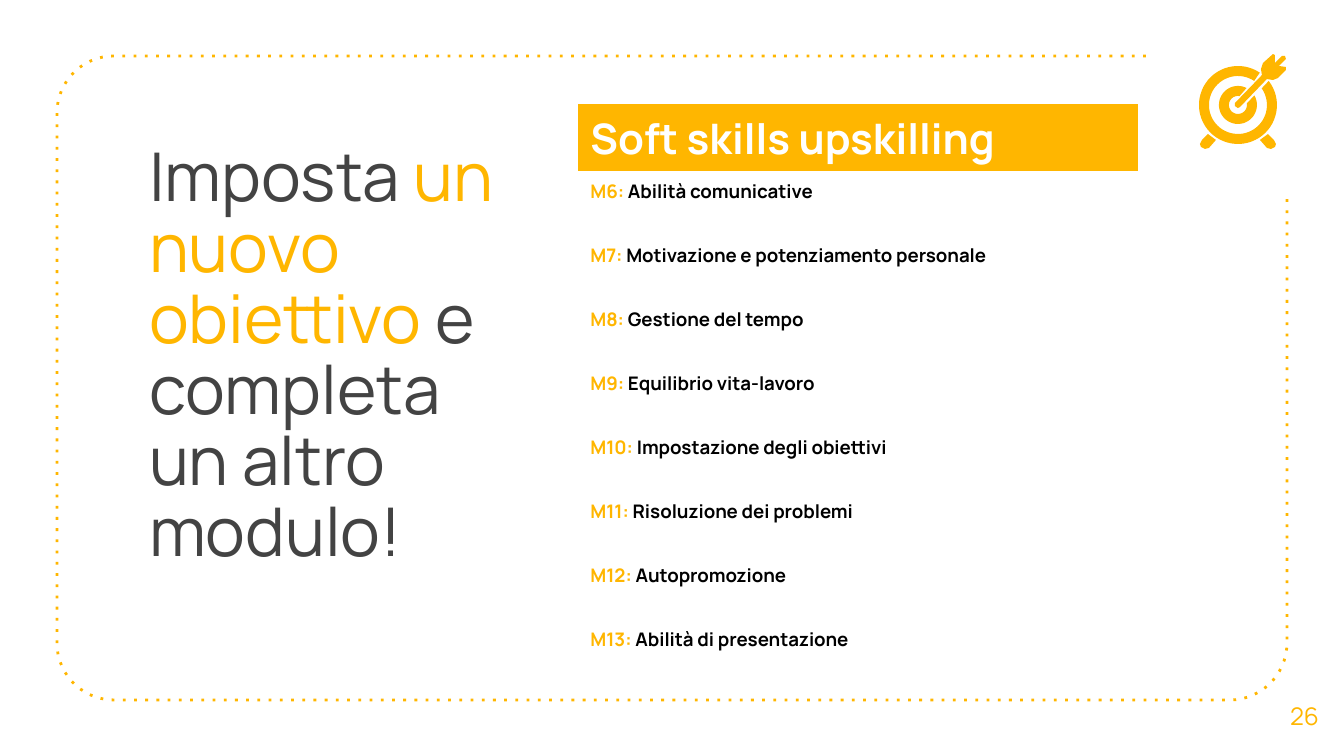
"""Build the soft skills module slide."""
from dataclasses import dataclass
from math import cos, radians, sin

from pptx import Presentation
from pptx.dml.color import RGBColor
from pptx.enum.dml import MSO_LINE
from pptx.enum.text import MSO_ANCHOR, PP_ALIGN
from pptx.oxml.ns import qn
from pptx.util import Emu, Pt

SCALE = 914400 / 134.4
DOT = MSO_LINE.ROUND_DOT
TOP, MIDDLE = MSO_ANCHOR.TOP, MSO_ANCHOR.MIDDLE
LEFT, CENTER = PP_ALIGN.LEFT, PP_ALIGN.CENTER
FONT = "Manrope"
GOLD, GRAY, BLACK, WHITE = "FFB600", "434343", "000000", "FFFFFF"
Points = list[tuple[float, float]]


@dataclass
class Run:
    text: str
    size: float
    color: str
    bold: bool = False


@dataclass
class Box:
    left: int
    top: int
    width: int
    height: int
    runs: list[Run]
    anchor: MSO_ANCHOR = TOP
    align: PP_ALIGN = LEFT
    space: float = 1.0


@dataclass
class Ring:
    outer: int
    inner: int
    start: tuple[int, int]
    end: tuple[int, int]


HUB = (1238, 105)
RINGS = [
    Ring(39, 29, (-38, -35), (304, 304)),
    Ring(19, 9, (-30, -10), (297, 280)),
]
FOOT = [(1208, 134), (1202, 140), (1200, 144), (1201, 147), (1205, 149),
        (1209, 148), (1216, 140)]
DART = [(1273, 54), (1263, 63), (1261, 69), (1262, 75), (1235, 103),
        (1235, 106), (1238, 108), (1240, 107), (1267, 79), (1273, 80),
        (1278, 78), (1286, 70), (1286, 67), (1279, 66), (1286, 59),
        (1285, 56), (1282, 56), (1275, 63), (1275, 55)]
TITLE = Box(136, 132, 399, 126, [
    Run("Imposta ", 36, GRAY),
    Run("un nuovo obiettivo", 36, GOLD),
    Run(" e completa un altro modulo!", 36, GRAY),
], space=0.88)
PAGE = Box(1265, 675, 79, 81, [Run("26", 13, GOLD)], MIDDLE, CENTER)
HEAD = Run("Soft skills upskilling", 22.5, WHITE, True)
SKILLS = ["Abilità comunicative", "Motivazione e potenziamento personale",
          "Gestione del tempo", "Equilibrio vita-lavoro",
          "Impostazione degli obiettivi", "Risoluzione dei problemi",
          "Autopromozione", "Abilità di presentazione"]
FIRST = 6


def px(value: float) -> Emu:
    return Emu(round(value * SCALE))


def rgb(color: str) -> RGBColor:
    return RGBColor.from_string(color)


def arc(hub: tuple[int, int], radius: int, start: int, end: int) -> Points:
    steps = max(8, abs(end - start) // 6)
    turns = [radians(start + (end - start) * i / steps) for i in range(steps + 1)]
    return [(hub[0] + radius * cos(t), hub[1] + radius * sin(t)) for t in turns]


def outline(slide, points: Points, close: bool):
    spots = [(px(x), px(y)) for x, y in points]
    pen = slide.shapes.build_freeform(*spots[0], scale=1.0)
    pen.add_line_segments(spots[1:], close=close)
    shape = pen.convert_to_shape()
    shape.shadow.inherit = False
    return shape


def draw_frame(slide) -> None:
    points = [(1146, 56),
              *arc((114, 113), 57, 270, 180),
              *arc((114, 643), 57, 180, 90),
              *arc((1230, 643), 57, 90, 0),
              (1287, 196)]
    frame = outline(slide, points, False)
    frame.fill.background()
    frame.line.color.rgb = rgb(GOLD)
    frame.line.width = Pt(1.5)
    frame.line.dash_style = DOT
    frame.element.find(".//" + qn("a:prstDash")).set("val", "dot")


def draw_icon(slide) -> None:
    parts = [arc(HUB, ring.outer, ring.start[0], ring.end[0])
             + arc(HUB, ring.inner, ring.end[1], ring.start[1])
             for ring in RINGS]
    parts += [FOOT, [(2 * HUB[0] - x, y) for x, y in FOOT], DART]
    for points in parts:
        part = outline(slide, points, True)
        part.fill.solid()
        part.fill.fore_color.rgb = rgb(GOLD)
        part.line.fill.background()


def add_runs(para, runs: list[Run]) -> None:
    for item in runs:
        run = para.add_run()
        run.text = item.text
        font = run.font
        font.name = FONT
        font.size = Pt(item.size)
        font.bold = item.bold
        font.color.rgb = rgb(item.color)


def draw_box(slide, box: Box) -> None:
    shape = slide.shapes.add_textbox(
        px(box.left), px(box.top), px(box.width), px(box.height))
    frame = shape.text_frame
    frame.word_wrap = True
    frame.vertical_anchor = box.anchor
    frame.margin_left = frame.margin_right = px(13)
    frame.margin_top = frame.margin_bottom = px(13)
    para = frame.paragraphs[0]
    para.alignment = box.align
    para.line_spacing = box.space
    add_runs(para, box.runs)


def draw_table(slide) -> None:
    rows = [[HEAD]] + [
        [Run(f"M{number}: ", 10, GOLD, True), Run(skill, 10, BLACK, True)]
        for number, skill in enumerate(SKILLS, FIRST)]
    heights = [69] + [64] * len(SKILLS)
    table = slide.shapes.add_table(
        len(rows), 1, px(577), px(103), px(562), px(sum(heights))).table
    table.first_row = table.horz_banding = False
    for index, (runs, height) in enumerate(zip(rows, heights)):
        table.rows[index].height = px(height)
        cell = table.cell(index, 0)
        if index:
            cell.fill.background()
        else:
            cell.fill.solid()
            cell.fill.fore_color.rgb = rgb(GOLD)
        add_runs(cell.text_frame.paragraphs[0], runs)


def main() -> None:
    deck = Presentation()
    deck.slide_width, deck.slide_height = px(1344), px(756)
    slide = deck.slides.add_slide(deck.slide_layouts[6])
    draw_frame(slide)
    draw_box(slide, TITLE)
    draw_box(slide, PAGE)
    draw_icon(slide)
    draw_table(slide)
    deck.save("out.pptx")


if __name__ == "__main__":
    main()
